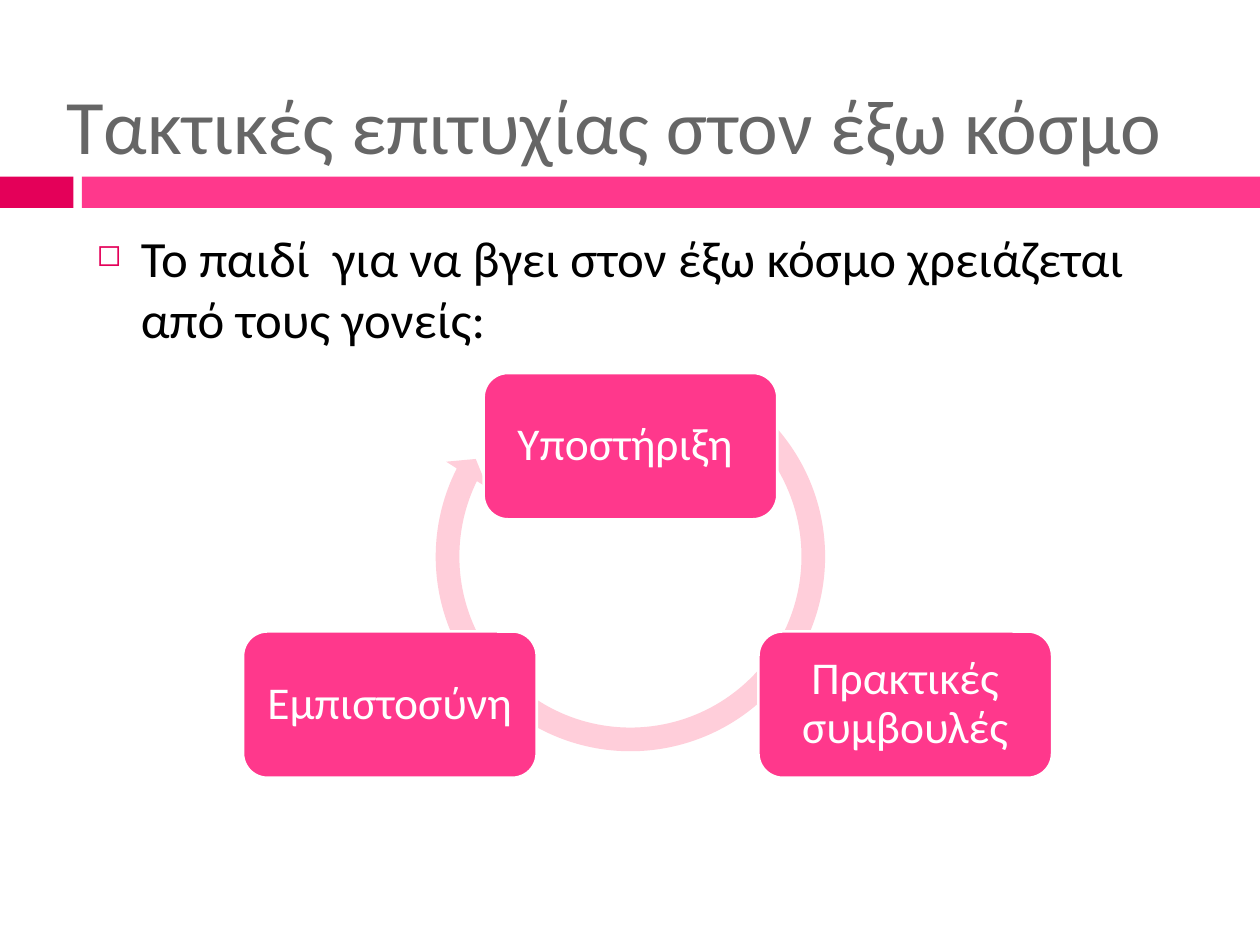
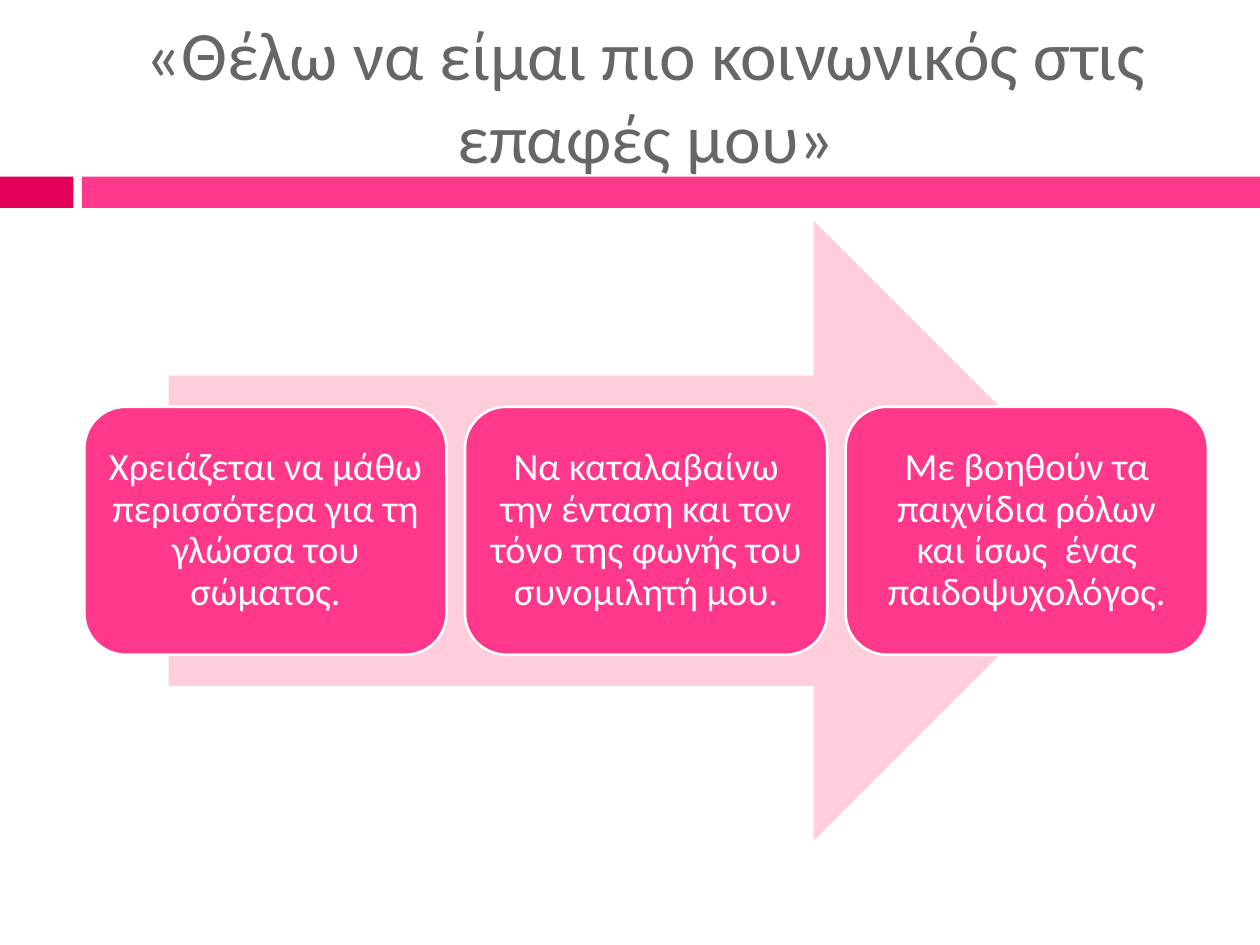
"""Build two slides on helping a child become more sociable."""
from lxml import etree
from pptx import Presentation
from pptx.dml.color import RGBColor
from pptx.enum.shapes import MSO_SHAPE
from pptx.enum.text import MSO_ANCHOR, PP_ALIGN
from pptx.oxml.ns import qn
from pptx.util import Cm, Pt

RECT = MSO_SHAPE.RECTANGLE
ROUND = MSO_SHAPE.ROUNDED_RECTANGLE
ARROW = MSO_SHAPE.RIGHT_ARROW
CYCLE = MSO_SHAPE.CIRCULAR_ARROW
TOP, MIDDLE = MSO_ANCHOR.TOP, MSO_ANCHOR.MIDDLE
LEFT, CENTER = PP_ALIGN.LEFT, PP_ALIGN.CENTER

FONT = "Calibri"
CRIMSON = RGBColor(0xE4, 0x00, 0x59)
PINK = RGBColor(0xFF, 0x38, 0x8C)
BLUSH = RGBColor(0xFF, 0xCE, 0xDA)
GRAY = RGBColor(0x66, 0x66, 0x66)
BLACK = RGBColor(0x00, 0x00, 0x00)
WHITE = RGBColor(0xFF, 0xFF, 0xFF)

WIDTH, HEIGHT = 25.4, 19.05
BODY = (1.7, 4.45, 22.65, 12.5)


def place(box):
    """Turn a box in centimetres into lengths."""
    return [Cm(side) for side in box]


def write(shape, text, size, color, align, anchor):
    """Set the one paragraph of a shape and return it."""
    frame = shape.text_frame
    frame.word_wrap = True
    frame.vertical_anchor = anchor
    frame.text = text
    para = frame.paragraphs[0]
    para.alignment = align
    font = para.runs[0].font
    font.name, font.size, font.color.rgb = FONT, Pt(size), color
    return para


def draw(slide, kind, box, fill):
    """Add a plain filled shape without outline or shadow."""
    shape = slide.shapes.add_shape(kind, *place(box))
    shape.shadow.inherit = False
    shape.fill.solid()
    shape.fill.fore_color.rgb = fill
    shape.line.fill.background()
    return shape


def card(slide, box, text, size, inset):
    """Add a pink rounded card with centred white text."""
    shape = draw(slide, ROUND, box, PINK)
    shape.line.color.rgb = WHITE
    shape.line.width = Pt(1.5)
    frame = shape.text_frame
    frame.margin_left = frame.margin_right = Cm(inset)
    frame.margin_top = frame.margin_bottom = Cm(inset)
    write(shape, text, size, WHITE, CENTER, MIDDLE).line_spacing = 0.9


def header(slide, box, text, size, align):
    """Draw the two-part band and the title in its box."""
    top, high, block, start = 3.56, 0.63, 1.48, 1.65
    draw(slide, RECT, (0, top, block, high), CRIMSON)
    draw(slide, RECT, (start, top, WIDTH - start, high), PINK)
    title = slide.shapes.add_textbox(*place(box))
    write(title, text, size, GRAY, align, MIDDLE)


def bullet(slide, box, text):
    """Write the lead sentence with a hollow square bullet."""
    lead = slide.shapes.add_textbox(*place(box))
    para = write(lead, text, 29, BLACK, LEFT, TOP)
    para.space_before = Pt(7)
    props = para._p.get_or_add_pPr()
    props.set("marL", str(Cm(0.89)))
    props.set("indent", str(-Cm(0.89)))
    tint = etree.SubElement(props, qn("a:buClr"))
    etree.SubElement(tint, qn("a:srgbClr"), val=str(CRIMSON))
    etree.SubElement(props, qn("a:buSzPct"), val="60000")
    etree.SubElement(props, qn("a:buChar"), char="◻")


def cycle(slide, box, nodes):
    """Draw a ring arrow with a card at each given offset."""
    left, top = box[:2]
    ring = draw(slide, CYCLE, (left + 6.83, top + 2.59, 8.36, 8.36), BLUSH)
    for index, value in enumerate((0.057, 3.405, 123.935, 182.9, 0.059)):
        ring.adjustments[index] = value
    for text, across, down in nodes:
        card(slide, (left + across, top + down, 5.92, 2.95), text, 26, 0.28)


def process(slide, box, steps):
    """Draw a wide arrow with a row of equal cards over it."""
    left, top, wide, high = box
    draw(slide, ARROW, (left + 0.075 * wide, top, 0.85 * wide, high), BLUSH)
    gap = 0.37
    span = (wide - gap * (len(steps) - 1)) / len(steps)
    for index, text in enumerate(steps):
        spot = left + index * (span + gap)
        card(slide, (spot, top + 0.3 * high, span, 0.4 * high), text, 22, 0.24)


def main():
    """Build both slides and save them."""
    deck = Presentation()
    deck.slide_width, deck.slide_height = Cm(WIDTH), Cm(HEIGHT)
    blank = deck.slide_layouts[6]

    slide = deck.slides.add_slide(blank)
    header(slide, (1.09, 0.91, 22.86, 3.18),
           "Τακτικές επιτυχίας στον έξω κόσμο", 44, LEFT)
    bullet(slide, BODY,
           "Το παιδί  για να βγει στον έξω κόσμο χρειάζεται από τους γονείς:")
    cycle(slide, BODY, [
        ("Υποστήριξη ", 8.05, 3.07),
        ("Πρακτικές συμβουλές", 13.59, 8.28),
        ("Εμπιστοσύνη ", 3.2, 8.28),
    ])

    slide = deck.slides.add_slide(blank)
    header(slide, (1.7, 0.53, 22.65, 2.74),
           "«Θέλω να είμαι πιο κοινωνικός στις επαφές μου»", 39.6, CENTER)
    process(slide, BODY, [
        "Χρειάζεται να μάθω περισσότερα για τη γλώσσα του σώματος.",
        "Να καταλαβαίνω την ένταση και τον τόνο της φωνής του συνομιλητή μου.",
        "Με βοηθούν τα παιχνίδια ρόλων και ίσως  ένας παιδοψυχολόγος.",
    ])
    deck.save("out.pptx")


if __name__ == "__main__":
    main()
